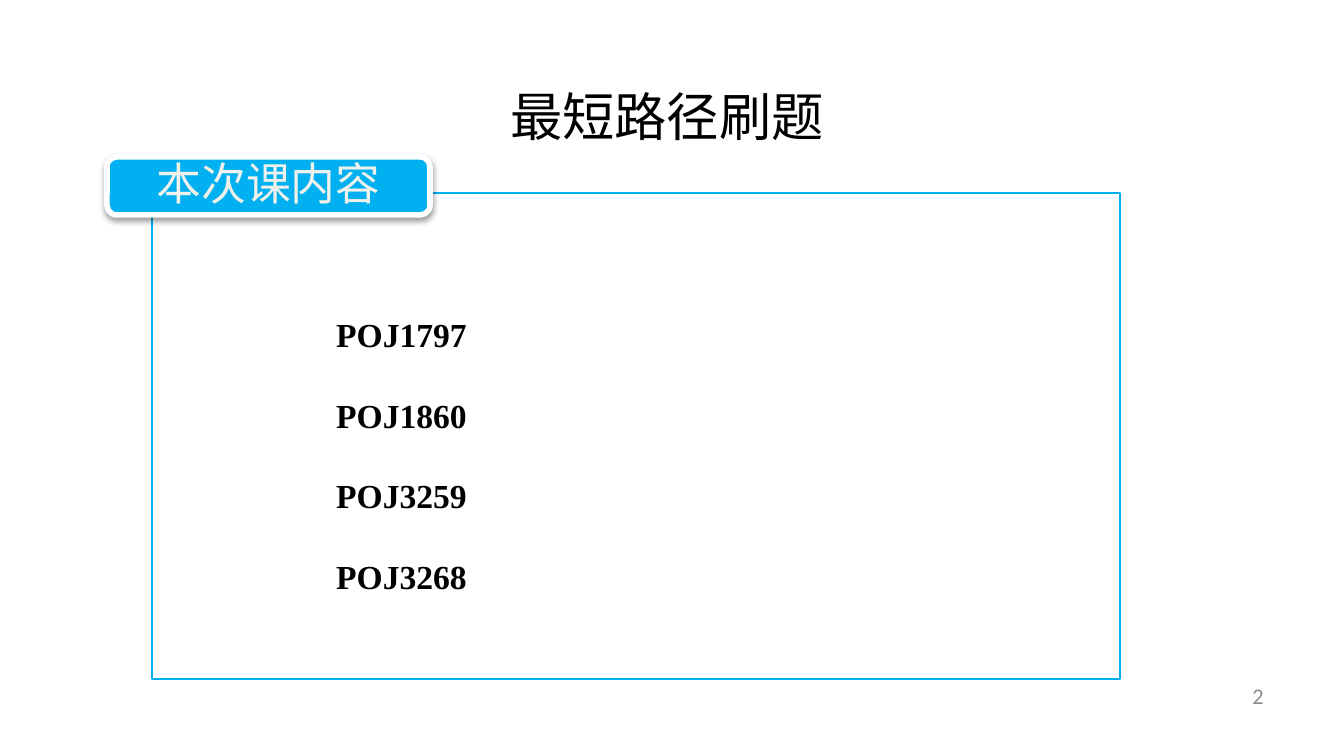
from lxml import etree
from pptx import Presentation
from pptx.dml.color import RGBColor
from pptx.enum.shapes import MSO_SHAPE
from pptx.enum.text import MSO_ANCHOR, PP_ALIGN
from pptx.oxml.ns import qn
from pptx.util import Pt

EMU_PER_PX = 6804
SLIDE_WIDTH, SLIDE_HEIGHT = 1344, 756

WHITE = RGBColor(0xFF, 0xFF, 0xFF)
BLACK = RGBColor(0x00, 0x00, 0x00)
SKY = RGBColor(0x00, 0xB0, 0xF0)
IVORY = RGBColor(0xEF, 0xF1, 0xEA)
GREY = RGBColor(0x8C, 0x8C, 0x8C)

LATIN_FONT = "Calibri"
CHINESE_FONT = "Noto Sans CJK SC"
SERIF_FONT = "Times New Roman"

RECTANGLE = MSO_SHAPE.RECTANGLE
ROUNDED = MSO_SHAPE.ROUNDED_RECTANGLE
LEFT, CENTER, RIGHT = PP_ALIGN.LEFT, PP_ALIGN.CENTER, PP_ALIGN.RIGHT
TOP, MIDDLE = MSO_ANCHOR.TOP, MSO_ANCHOR.MIDDLE

PROBLEMS = ["POJ1797", "POJ1860", "POJ3259", "POJ3268"]


def px(*lengths):
    return [length * EMU_PER_PX for length in lengths]


class LessonSlide:
    def __init__(self, presentation):
        self.slide = presentation.slides.add_slide(presentation.slide_layouts[6])

    def add_lines(self, shape, lines, size, color, font=LATIN_FONT, bold=False,
                  align=LEFT, anchor=TOP, spacing=1.0):
        frame = shape.text_frame
        frame.word_wrap = True
        frame.vertical_anchor = anchor
        for index, line in enumerate(lines):
            paragraph = frame.add_paragraph() if index else frame.paragraphs[0]
            paragraph.alignment = align
            paragraph.line_spacing = spacing
            run = paragraph.add_run()
            run.text = line
            run.font.size = Pt(size)
            run.font.name = font
            run.font.bold = bold
            run.font.color.rgb = color
            east_asian = etree.Element(qn("a:ea"), typeface=CHINESE_FONT)
            run.font._element.find(qn("a:latin")).addnext(east_asian)

    def text(self, box, lines, size, color, **style):
        self.add_lines(self.slide.shapes.add_textbox(*px(*box)), lines, size, color, **style)

    def panel(self, kind, box, fill, line, line_width):
        shape = self.slide.shapes.add_shape(kind, *px(*box))
        shape.fill.solid()
        shape.fill.fore_color.rgb = fill
        shape.line.color.rgb = line
        shape.line.width = Pt(line_width)
        shape.shadow.inherit = False
        return shape

    def frame(self, box):
        """Outlined content area with a 90% opaque white fill."""
        shape = self.panel(RECTANGLE, box, WHITE, SKY, 0.75)
        fill_color = shape._element.spPr.find(qn("a:solidFill"))[0]
        etree.SubElement(fill_color, qn("a:alpha"), val="90000")

    def badge(self, box, label):
        """Rounded heading with a white rim and a soft shadow below it."""
        shape = self.panel(ROUNDED, box, SKY, WHITE, 3)
        effects = shape._element.spPr.find(qn("a:effectLst"))
        shadow = etree.SubElement(
            effects, qn("a:outerShdw"), blurRad=str(Pt(3.1)), dist=str(Pt(1.6)),
            dir="5400000", rotWithShape="0")
        shadow_color = etree.SubElement(shadow, qn("a:srgbClr"), val=str(BLACK))
        etree.SubElement(shadow_color, qn("a:alpha"), val="38000")
        text = shape.text_frame
        text.margin_left, text.margin_right = px(32, 32)
        text.margin_top, text.margin_bottom = px(8, 8)
        self.add_lines(shape, [label], 24, IVORY, align=CENTER, anchor=MIDDLE, spacing=0.9)


def main():
    presentation = Presentation()
    presentation.slide_width, presentation.slide_height = px(SLIDE_WIDTH, SLIDE_HEIGHT)

    lesson = LessonSlide(presentation)
    lesson.text((964, 675, 313, 40), ["2"], 12, GREY, align=RIGHT, anchor=MIDDLE)
    lesson.text((445, 56, 444, 90), ["最短路径刷题"], 28, BLACK,
                font=CHINESE_FONT, align=CENTER, spacing=1.35)
    lesson.frame((152, 193, 968, 486))
    lesson.badge((107, 157, 323, 58), "本次课内容")
    lesson.text((323, 267, 661, 327), PROBLEMS, 18, BLACK,
                font=SERIF_FONT, bold=True, spacing=2.0)

    presentation.save("out.pptx")


if __name__ == "__main__":
    main()
